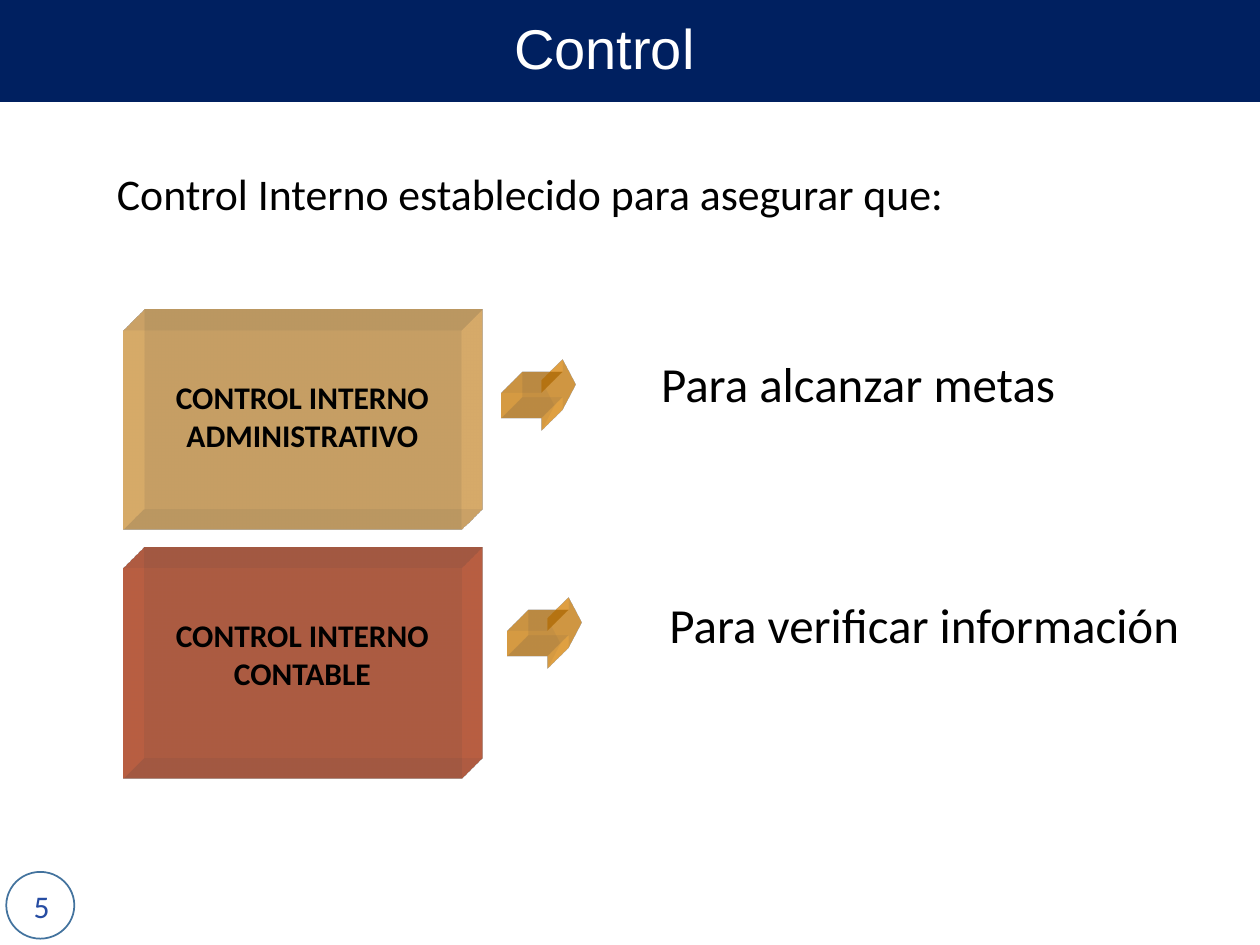
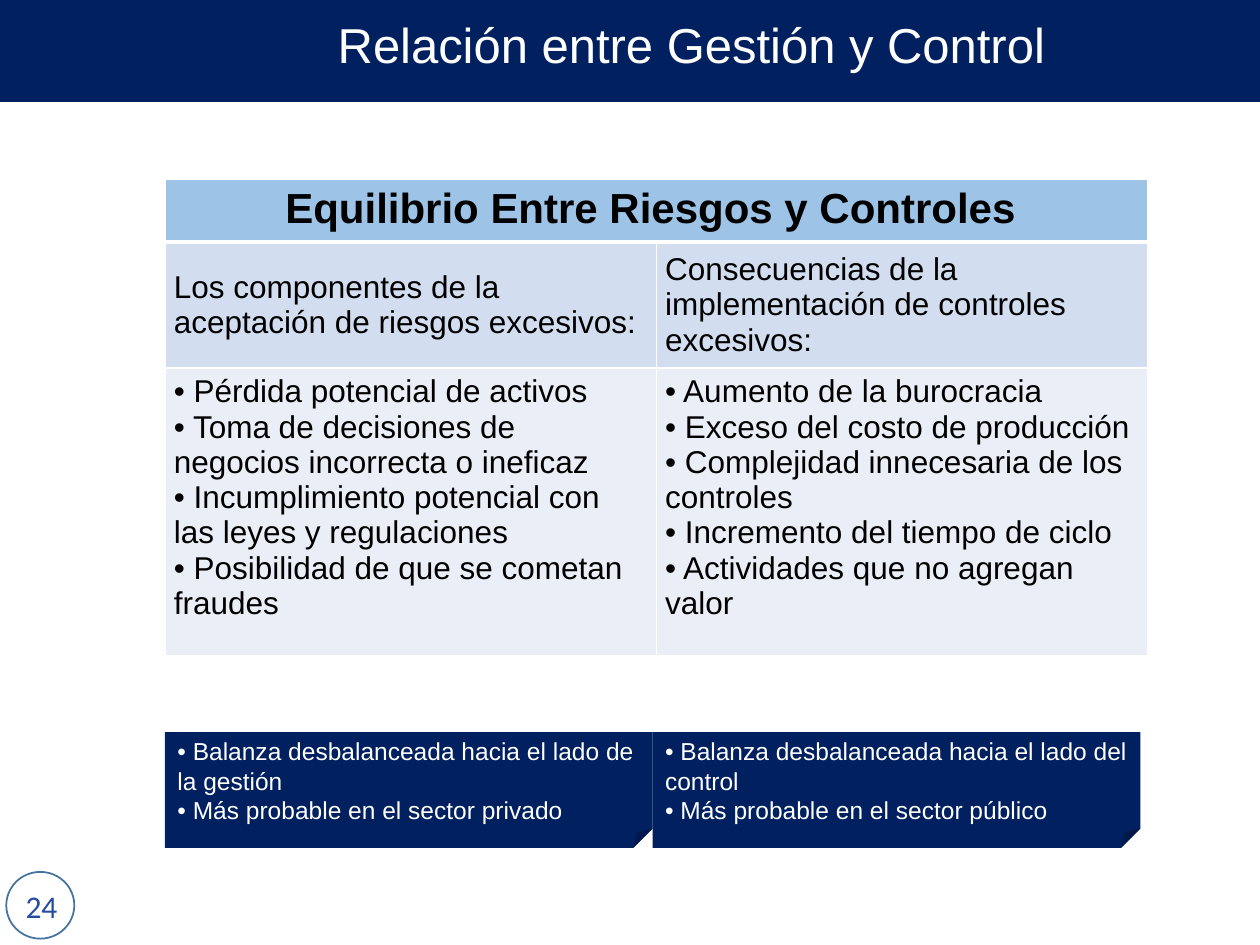
from collections import namedtuple
from dataclasses import dataclass

from lxml import etree
from pptx import Presentation
from pptx.dml.color import RGBColor
from pptx.enum.shapes import MSO_SHAPE as Shape
from pptx.enum.text import MSO_ANCHOR as Anchor, MSO_AUTO_SIZE as AutoSize, PP_ALIGN as Align
from pptx.oxml import parse_xml
from pptx.oxml.ns import nsdecls, qn
from pptx.util import Inches, Pt

Box = namedtuple("Box", "x y w h")


@dataclass(frozen=True)
class Theme:
    navy: str = "002060"
    white: str = "FFFFFF"
    black: str = "000000"
    ring: str = "43739E"
    number: str = "264CA2"
    amber: str = "FFB445"
    red: str = "CC3300"
    orange: str = "FF9900"
    head: str = "9DC3E6"
    subhead: str = "D2DEEF"
    body: str = "EAEFF7"
    sans: str = "Arial"
    text: str = "Calibri"
    lead: int = 25
    goal: int = 28
    label: int = 18
    note: int = 14


T = Theme()
SLIDE = Box(0, 0, 10, 7.5)
BAND = Box(0, 0, SLIDE.w, 0.81)
RING = Box(0.05, 6.92, 0.54, 0.53)
NUMBER = Box(0.1, 6.99, 0.46, 0.4)
INSETS = dict(margin_left=Inches(0.07), margin_right=Inches(0.07),
              margin_top=Inches(0.05), margin_bottom=Inches(0.05))


def inches(box):
    return [Inches(v) for v in box]


def bullets(*items):
    return [f"• {item}" for item in items]


def write(tf, lines, size, font=T.text, color=T.black, bold=False, align=Align.LEFT, spacing=None):
    """Fill a text frame, one paragraph a line."""
    for i, line in enumerate(lines):
        p = tf.paragraphs[0] if i == 0 else tf.add_paragraph()
        p.alignment = align
        if spacing:
            p.line_spacing = spacing
        r = p.add_run()
        r.text = line
        for name, value in dict(size=Pt(size), name=font, bold=bold).items():
            setattr(r.font, name, value)
        r.font.color.rgb = RGBColor.from_string(color)


def add_text(s, box, lines, size, wrap=True, **style):
    tf = s.shapes.add_textbox(*inches(box)).text_frame
    tf.word_wrap = wrap
    write(tf, lines, size, **style)


def add_panel(s, kind, box, fill, line=None):
    sp = s.shapes.add_shape(kind, *inches(box))
    sp.shadow.inherit = False
    sp.fill.solid()
    sp.fill.fore_color.rgb = RGBColor.from_string(fill)
    if line:
        sp.line.color.rgb = RGBColor.from_string(line)
        sp.line.width = Pt(1)
    else:
        sp.line.fill.background()
    return sp


def extrude(sp, color):
    """Make a shape half transparent and give it depth to the top right."""
    sppr = sp._element.spPr
    etree.SubElement(sppr.find(".//" + qn("a:srgbClr")), qn("a:alpha"), val="50000")
    sppr.append(parse_xml(
        f'<a:scene3d {nsdecls("a")}><a:camera prst="legacyObliqueTopRight"/>'
        '<a:lightRig rig="legacyFlat3" dir="b"/></a:scene3d>'))
    sppr.append(parse_xml(
        f'<a:sp3d {nsdecls("a")} extrusionH="430200" prstMaterial="legacyMatte">'
        '<a:bevelT w="13500" h="13500" prst="angle"/>'
        '<a:bevelB w="13500" h="13500" prst="angle"/>'
        f'<a:extrusionClr><a:srgbClr val="{color}"/></a:extrusionClr></a:sp3d>'))


def add_frame(s):
    """Put the title band and number ring on the layout all slides use."""
    tree = s.slide_layout.shapes._spTree
    parts = (add_panel(s, Shape.RECTANGLE, BAND, T.navy),
             add_panel(s, Shape.OVAL, RING, T.white, T.ring))
    for i, sp in enumerate(parts):
        tree.insert(2 + i, sp._element)


def add_heading(s, title, box, size, number):
    sp = s.shapes.title
    for name, value in zip(("left", "top", "width", "height"), inches(box)):
        setattr(sp, name, value)
    tf = sp.text_frame
    for name, value in dict(word_wrap=True, auto_size=AutoSize.NONE,
                            vertical_anchor=Anchor.TOP).items():
        setattr(tf, name, value)
    write(tf, [title], size, T.sans, T.white, spacing=0.9)
    add_text(s, NUMBER, [number], T.label, color=T.number, align=Align.CENTER)


def add_control(s, box, color, label, arrow_x, goal, goal_box):
    """A solid block with its label, an arrow and the goal it leads to."""
    extrude(add_panel(s, Shape.RECTANGLE, box, color), color)
    add_text(s, Box(box.x + 0.08, box.y + 0.33, box.w, 0.71), label, T.label,
             bold=True, align=Align.CENTER)
    arrow = add_panel(s, Shape.RIGHT_ARROW, Box(arrow_x, box.y + 0.4, 0.42, 0.4), T.orange)
    arrow.adjustments[0], arrow.adjustments[1] = 0.5, 0.26
    extrude(arrow, T.orange)
    add_text(s, goal_box, [goal], T.goal, wrap=False, align=Align.CENTER)


def set_borders(cell, bottom=1):
    tcpr = cell._tc.get_or_add_tcPr()
    for i, (side, width) in enumerate(dict(lnL=1, lnR=1, lnT=1, lnB=bottom).items()):
        tcpr.insert(i, parse_xml(
            f'<a:{side} {nsdecls("a")} w="{Pt(width)}"><a:solidFill>'
            f'<a:srgbClr val="{T.white}"/></a:solidFill></a:{side}>'))


def add_balance_table(s, box, heights, rows):
    """A merged heading over two columns."""
    table = s.shapes.add_table(len(rows), 2, *inches(box)).table
    table.first_row = table.horz_banding = False
    for col in table.columns:
        col.width = Inches(box.w / 2)
    table.cell(0, 0).merge(table.cell(0, 1))
    looks = (dict(fill=T.head, size=24, bold=True, align=Align.CENTER, anchor=Anchor.TOP),
             dict(fill=T.subhead, anchor=Anchor.MIDDLE),
             dict(fill=T.body, anchor=Anchor.TOP))
    for i, (row, height, look) in enumerate(zip(rows, heights, looks)):
        table.rows[i].height = Inches(height)
        for j in range(2):
            cell = table.cell(i, j)
            style = dict(look)
            cell.fill.solid()
            cell.fill.fore_color.rgb = RGBColor.from_string(style.pop("fill"))
            for name, value in dict(INSETS, vertical_anchor=style.pop("anchor")).items():
                setattr(cell, name, value)
            set_borders(cell, bottom=3 if i == 0 else 1)
            if j < len(row):
                write(cell.text_frame, row[j], style.pop("size", T.label), T.sans, **style)


def add_notes(s, box, notes):
    """Folded notes side by side, sharing the box equally."""
    w = box.w / len(notes)
    for i, lines in enumerate(notes):
        sp = add_panel(s, Shape.FOLDED_CORNER, Box(box.x + i * w, box.y, w, box.h), T.navy)
        sp.text_frame.vertical_anchor = Anchor.MIDDLE
        write(sp.text_frame, lines, T.note, T.sans, T.white)


def control_slide(s):
    add_heading(s, "Control", Box(3.98, 0.12, 2.08, 0.38), 32, "5")
    add_text(s, Box(0.83, 1.32, 7.72, 0.5), ["Control Interno establecido para asegurar que:"],
             T.lead, align=Align.JUSTIFY, spacing=0.9)
    add_control(s, Box(0.98, 2.62, 2.68, 1.58), T.amber, ["CONTROL INTERNO ADMINISTRATIVO"],
                3.98, "Para alcanzar metas", Box(5.13, 2.76, 3.36, 0.57))
    add_control(s, Box(0.98, 4.51, 2.68, 1.67), T.red, ["CONTROL INTERNO", "CONTABLE"],
                4.03, "Para verificar información", Box(5.19, 4.67, 4.29, 0.57))


def balance_slide(s):
    add_heading(s, "Relación entre Gestión y Control", Box(2.58, 0.12, 6.23, 0.73), 28, "24")
    add_balance_table(s, Box(1.31, 1.42, 7.8, 3.72), (0.48, 0.96, 2.28), [
        [["Equilibrio Entre Riesgos y Controles "]],
        [["Los componentes de la aceptación de riesgos excesivos:"],
         ["Consecuencias de la implementación de controles excesivos:"]],
        [bullets("Pérdida potencial de activos",
                 "Toma de decisiones de negocios incorrecta o ineficaz",
                 "Incumplimiento potencial con las leyes y regulaciones",
                 "Posibilidad de que se cometan fraudes"),
         bullets("Aumento de la burocracia",
                 "Exceso del costo de producción",
                 "Complejidad innecesaria de los controles",
                 "Incremento del tiempo de ciclo",
                 "Actividades que no agregan valor")],
    ])
    add_notes(s, Box(1.31, 5.81, 7.74, 0.92), [
        bullets("Balanza desbalanceada hacia el lado de la gestión",
                "Más probable en el sector privado"),
        bullets("Balanza desbalanceada hacia el lado del control",
                "Más probable en el sector público"),
    ])


def main():
    prs = Presentation()
    prs.slide_width, prs.slide_height = Inches(SLIDE.w), Inches(SLIDE.h)
    title_only = prs.slide_layouts[5]
    first, second = (prs.slides.add_slide(title_only) for _ in range(2))
    add_frame(first)
    control_slide(first)
    balance_slide(second)
    prs.save("out.pptx")


if __name__ == "__main__":
    main()
